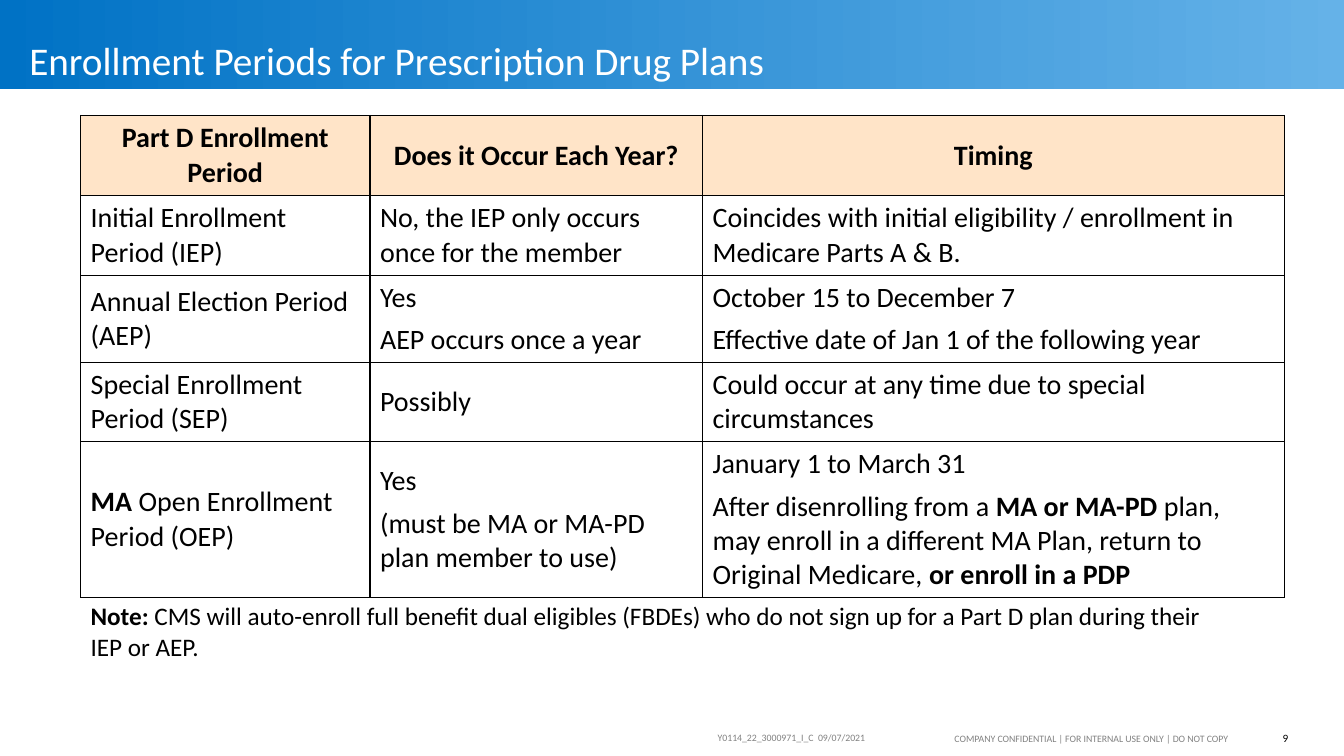
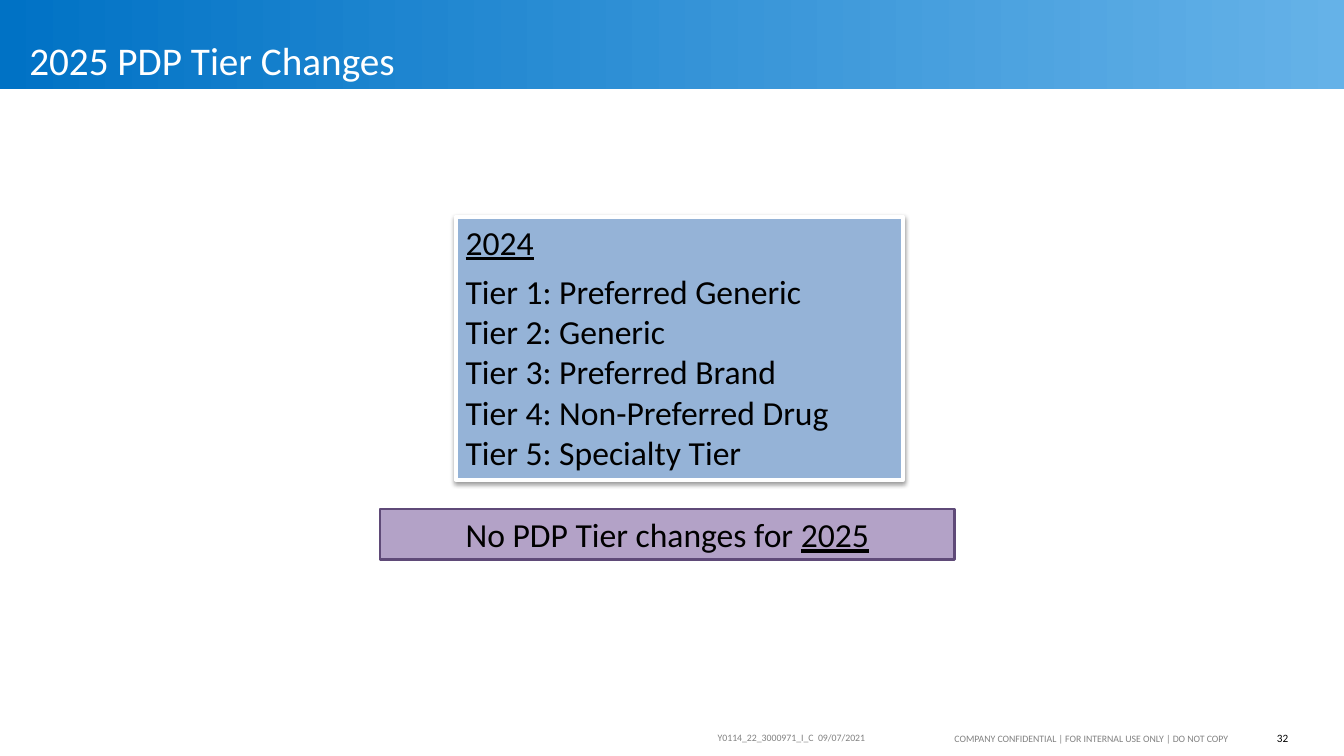
"""Build two slides on prescription drug plan enrollment periods and tiers."""
import dataclasses

import lxml.etree
import pptx
import pptx.dml.color
import pptx.enum.shapes
import pptx.enum.text
import pptx.oxml.ns
import pptx.util

Pt = pptx.util.Pt
RGB = pptx.dml.color.RGBColor.from_string
qn = pptx.oxml.ns.qn
RECT = pptx.enum.shapes.MSO_SHAPE.RECTANGLE
ALIGN = pptx.enum.text.PP_ALIGN
ANCHOR = pptx.enum.text.MSO_ANCHOR


@dataclasses.dataclass(frozen=True)
class Theme:
    font: str = "Calibri"
    ink: str = "000000"
    white: str = "FFFFFF"
    grey: str = "818181"
    band: tuple = ("0072C5", "65B2E8")
    header: str = "FFE4C8"
    blue: str = "95B3D7"
    purple: str = "B3A2C7"
    purple_edge: str = "5F4A78"
    title: int = 28
    callout: int = 24
    table: int = 20
    note: int = 18
    number: int = 8
    footer: int = 7


T = Theme()
prs = pptx.Presentation()
prs.slide_width = pptx.util.Inches(13.33)
prs.slide_height = pptx.util.Inches(7.5)


def area(x, y, w, h):
    """Turn percentages of the slide into left, top, width and height."""
    across, down = prs.slide_width / 100, prs.slide_height / 100
    return int(x * across), int(y * down), int(w * across), int(h * down)


def write(tf, text, size, color=T.ink, align=ALIGN.LEFT, mark="bold", after=0):
    """Write one paragraph per line, marking the parts between asterisks."""
    tf.word_wrap = True
    for i, line in enumerate(text.split("\n")):
        p = tf.add_paragraph() if i else tf.paragraphs[0]
        p.alignment = align
        p.space_after = Pt(after)
        p.font.name, p.font.size = T.font, Pt(size)
        p.font.color.rgb = RGB(color)
        for j, part in enumerate(line.split("*")):
            if part:
                r = p.add_run()
                r.text = part
                if j % 2:
                    setattr(r.font, mark, True)


pages = [("Enrollment Periods for Prescription Drug Plans", "9"), ("2025 PDP Tier Changes", "32")]
for title, number in pages:
    s = prs.slides.add_slide(prs.slide_layouts[6])
    sp = s.shapes.add_shape(RECT, *area(0, 0, 100, 11.73))
    sp.shadow.inherit = False
    sp.line.fill.background()
    sp.fill.gradient()
    sp.fill.gradient_angle = 0
    for stop, color in zip(sp.fill.gradient_stops, T.band):
        stop.color.rgb = RGB(color)

    frames = [
        (area(70.28, 95.6, 22.5, 4.13), "COMPANY CONFIDENTIAL | FOR INTERNAL USE ONLY | DO NOT COPY",
         T.footer, T.grey, ALIGN.LEFT, ANCHOR.MIDDLE, 0.1),
        (area(53.4, 96.13, 14.1, 2.93), "Y0114_22_3000971_I_C  09/07/2021",
         T.footer, T.grey, ALIGN.LEFT, ANCHOR.MIDDLE, 0),
        (area(92.55, 95.6, 4.05, 4.13), number, T.number, T.ink, ALIGN.RIGHT, ANCHOR.MIDDLE, 0),
        (area(2.18, 0, 86.25, 11.73), title, T.title, T.white, ALIGN.LEFT, ANCHOR.BOTTOM, 0),
    ]
    for box, text, size, color, align, anchor, inset in frames:
        tf = s.shapes.add_textbox(*box).text_frame
        tf.margin_left = pptx.util.Inches(inset)
        tf.vertical_anchor = anchor
        write(tf, text, size, color, align)
    tf.paragraphs[0].line_spacing = 0.9

periods, tiers = prs.slides

rows = [
    ("*Part D Enrollment Period*", "*Does it Occur Each Year?*", "*Timing*"),
    ("Initial Enrollment Period (IEP)", "No, the IEP only occurs once for the member",
     "Coincides with initial eligibility / enrollment in Medicare Parts A & B."),
    ("Annual Election Period (AEP)", "Yes\nAEP occurs once a year",
     "October 15 to December 7\nEffective date of Jan 1 of the following year"),
    ("Special Enrollment Period (SEP)", "Possibly",
     "Could occur at any time due to special circumstances"),
    ("*MA *Open Enrollment Period (OEP)", "Yes\n(must be MA or MA-PD plan member to use)",
     "January 1 to March 31\nAfter disenrolling from a *MA or MA-PD *plan, may enroll in a "
     "different MA Plan, return to Original Medicare, *or enroll in a PDP*"),
]
widths = [21.53, 24.75, 43.27]
heights = [10.53, 10.53, 11.6, 10.4, 20.67]
box = area(6, 15.27, sum(widths), sum(heights))
table = periods.shapes.add_table(len(rows), len(widths), *box).table
table.first_row = table.horz_banding = False
for column, width in zip(table.columns, widths):
    column.width = area(0, 0, width, 0)[2]
for i, (row, height) in enumerate(zip(rows, heights)):
    table.rows[i].height = area(0, 0, 0, height)[3]
    for j, text in enumerate(row):
        cell = table.cell(i, j)
        cell.vertical_anchor = ANCHOR.MIDDLE
        tcPr = cell._tc.get_or_add_tcPr()
        for side in ("a:lnL", "a:lnR", "a:lnT", "a:lnB"):
            ln = lxml.etree.SubElement(tcPr, qn(side), w=str(Pt(1)))
            fill = lxml.etree.SubElement(ln, qn("a:solidFill"))
            lxml.etree.SubElement(fill, qn("a:srgbClr"), val=T.ink)
        if i:
            cell.fill.background()
            write(cell.text_frame, text, T.table, after=6)
        else:
            cell.fill.solid()
            cell.fill.fore_color.rgb = RGB(T.header)
            write(cell.text_frame, text, T.table, align=ALIGN.CENTER, after=12)
            cell.text_frame.paragraphs[0].line_spacing = Pt(25)

tf = periods.shapes.add_textbox(*area(6, 78.8, 85.2, 9.47)).text_frame
write(tf, "*Note:* CMS will auto-enroll full benefit dual eligibles (FBDEs) who do not sign up "
      "for a Part D plan during their IEP or AEP.", T.note)

callouts = [
    (area(33.9, 28.67, 33.3, 34.8), T.blue, T.white, 3, ALIGN.LEFT, ANCHOR.TOP,
     "*2024*\nTier 1: Preferred Generic\nTier 2: Generic\nTier 3: Preferred Brand\n"
     "Tier 4: Non-Preferred Drug\nTier 5: Specialty Tier"),
    (area(28.28, 67.33, 42.75, 6.67), T.purple, T.purple_edge, 2, ALIGN.CENTER, ANCHOR.MIDDLE,
     "No PDP Tier changes for *2025*"),
]
boxes = []
for box, color, edge, weight, align, anchor, text in callouts:
    sp = tiers.shapes.add_shape(RECT, *box)
    sp.shadow.inherit = False
    sp.fill.solid()
    sp.fill.fore_color.rgb = RGB(color)
    sp.line.color.rgb = RGB(edge)
    sp.line.width = Pt(weight)
    sp.text_frame.vertical_anchor = anchor
    write(sp.text_frame, text, T.callout, align=align, mark="underline")
    boxes.append(sp)

tier_box = boxes[0]
tier_box.text_frame.paragraphs[0].space_after = Pt(6)
effects = tier_box._element.spPr.find(qn("a:effectLst"))
shadow = lxml.etree.SubElement(effects, qn("a:outerShdw"), blurRad=str(Pt(3.1)),
                               dist=str(Pt(1.6)), dir="5400000", rotWithShape="0")
tint = lxml.etree.SubElement(shadow, qn("a:srgbClr"), val=T.ink)
lxml.etree.SubElement(tint, qn("a:alpha"), val="38000")

prs.save("out.pptx")
